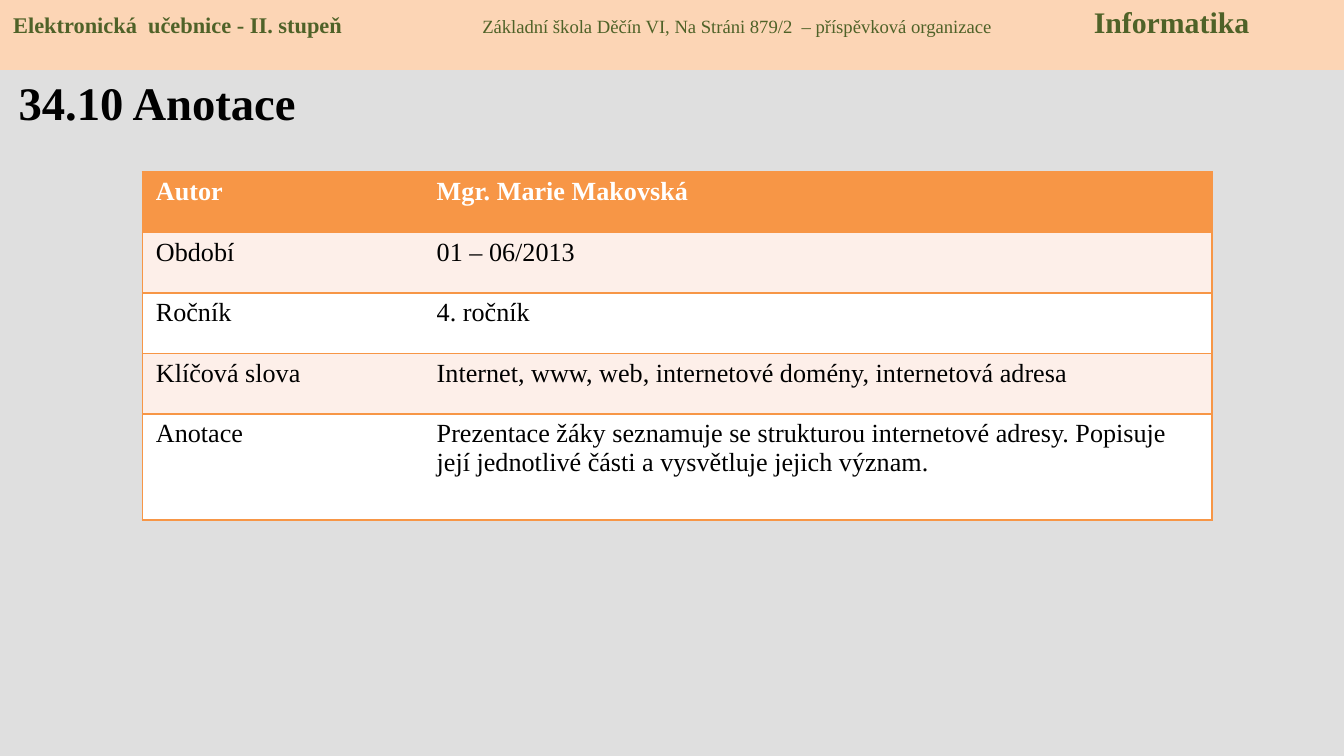
from lxml import etree
from pptx import Presentation, util as u
from pptx.dml.color import RGBColor
from pptx.enum import shapes, text
from pptx.oxml.ns import qn

COLORS = {
    "background": "DFDFDF",
    "band": "FCD5B5",
    "green": "4F6228",
    "orange": "F79646",
    "light": "FDEFE9",
    "white": "FFFFFF",
    "black": "000000",
}


def rgb(name):
    return RGBColor.from_string(COLORS[name])


def add_run(p, content, size=14, color="black", bold=False, font="Times New Roman"):
    r = p.add_run()
    r.text = content
    r.font.name = font
    r.font.size = u.Pt(size)
    r.font.bold = bold
    r.font.color.rgb = rgb(color)


def set_borders(cell, sides, color):
    """Draw the given sides (letters of LRTB) and clear the others."""
    tc_pr = cell._tc.get_or_add_tcPr()
    for i, side in enumerate("LRTB"):
        ln = etree.Element(qn(f"a:ln{side}"), w=str(u.Pt(1)))
        if side in sides:
            fill = etree.SubElement(ln, qn("a:solidFill"))
            etree.SubElement(fill, qn("a:srgbClr"), val=COLORS[color])
        else:
            etree.SubElement(ln, qn("a:noFill"))
        tc_pr.insert(i, ln)


class SlideBuilder:
    def __init__(self, prs):
        self.s = prs.slides.add_slide(prs.slide_layouts[6])
        fill = self.s.background.fill
        fill.solid()
        fill.fore_color.rgb = rgb("background")

    def title(self, content, left, top, width, height):
        box = self.s.shapes.add_textbox(*map(u.Inches, (left, top, width, height)))
        tf = box.text_frame
        tf.word_wrap = True
        add_run(tf.paragraphs[0], content, size=25, bold=True)

    def table(self, rows, left, top, col_widths, row_heights):
        frame = self.s.shapes.add_table(
            len(rows), len(col_widths), u.Inches(left), u.Inches(top),
            u.Inches(sum(col_widths)), u.Inches(sum(row_heights)))
        table = frame.table
        for col, width in zip(table.columns, col_widths):
            col.width = u.Inches(width)
        for i, (row, height) in enumerate(zip(rows, row_heights)):
            table.rows[i].height = u.Inches(height)
            header = i == 0
            fill = "orange" if header else ("white", "light")[i % 2]
            for j, content in enumerate(row):
                cell = table.cell(i, j)
                cell.margin_top = cell.margin_bottom = u.Inches(0.04)
                cell.fill.solid()
                cell.fill.fore_color.rgb = rgb(fill)
                set_borders(cell, "LTB" if j == 0 else "RTB", "orange")
                add_run(cell.text_frame.paragraphs[0], content, bold=header,
                        color="white" if header else "black")

    def band(self, parts, tab_stops, left, top, width, height):
        """Filled bar whose parts, (text, size, bold), start at the tab stops."""
        sp = self.s.shapes.add_shape(
            shapes.MSO_SHAPE.RECTANGLE, *map(u.Inches, (left, top, width, height)))
        sp.shadow.inherit = False
        sp.fill.solid()
        sp.fill.fore_color.rgb = rgb("band")
        sp.line.fill.background()
        tf = sp.text_frame
        tf.word_wrap = True
        tf.vertical_anchor = text.MSO_ANCHOR.TOP
        p = tf.paragraphs[0]
        p.alignment = text.PP_ALIGN.LEFT
        tabs = etree.SubElement(p._p.get_or_add_pPr(), qn("a:tabLst"))
        for stop in tab_stops:
            etree.SubElement(tabs, qn("a:tab"), pos=str(u.Inches(stop)), algn="l")
        for i, (content, size, bold) in enumerate(parts):
            add_run(p, ("\t" if i else "") + content, size, "green", bold)


def main():
    prs = Presentation()
    prs.slide_width = u.Inches(10)
    prs.slide_height = prs.slide_width * 9 // 16
    slide = SlideBuilder(prs)
    slide.title("34.10 Anotace", 0.04, 0.5, 3.19, 0.49)
    slide.table(
        [("Autor", "Mgr. Marie Makovská"),
         ("Období", "01 – 06/2013"),
         ("Ročník", "4. ročník"),
         ("Klíčová slova", "Internet, www, web, internetové domény, internetová adresa"),
         ("Anotace", "Prezentace žáky seznamuje se strukturou internetové adresy. "
                     "Popisuje její jednotlivé části a vysvětluje jejich význam.")],
        1.06, 1.28, col_widths=(2.09, 5.87), row_heights=[0.45] * 4 + [0.79])
    slide.band(
        [("Elektronická  učebnice - II. stupeň", 12, True),
         ("Základní škola Děčín VI, Na Stráni 879/2  – příspěvková organizace", 10, False),
         ("Informatika", 16, True)],
        (3.49, 8.04), 0, -0.02, 10, 0.54)
    prs.save("out.pptx")


if __name__ == "__main__":
    main()
